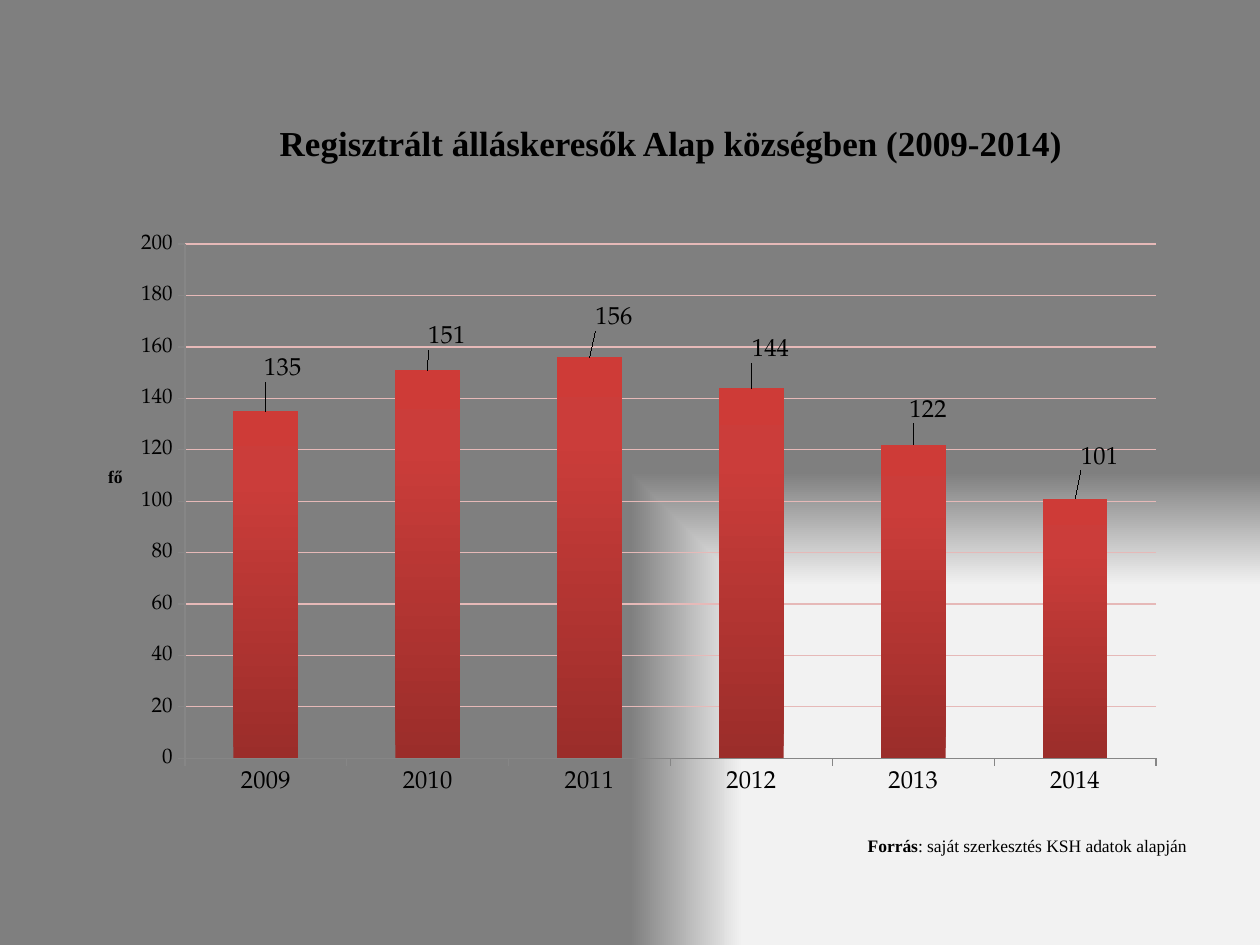
from lxml.etree import SubElement
from pptx import Presentation
from pptx.chart.data import CategoryChartData
from pptx.dml.color import RGBColor
from pptx.enum.chart import XL_CHART_TYPE, XL_LABEL_POSITION, XL_TICK_MARK
from pptx.enum.text import MSO_ANCHOR, PP_ALIGN
from pptx.oxml import parse_xml
from pptx.oxml.ns import nsdecls, qn
from pptx.util import Emu, Pt

SERIF = "Times New Roman"
CHART_FONT = "TeX Gyre Pagella"
JOBSEEKERS = {"2009": 135, "2010": 151, "2011": 156, "2012": 144, "2013": 122, "2014": 101}
LABEL_OFFSETS = [(17, -24), (19, -15), (24, -21), (19, -20), (15, -16), (25, -23)]


def px(length):
    return Emu(round(length * 914400 / 126))


def color(value):
    return RGBColor.from_string(value)


def format_font(font, **values):
    font.color.rgb = color(values.pop("color", "000000"))
    for name, value in values.items():
        setattr(font, name, value)


def gradient(stops, direction):
    """Return a gradFill element from (percent, colour) stops and direction XML."""
    stop_xml = "".join(
        f'<a:gs pos="{percent * 1000}"><a:srgbClr val="{value}"/></a:gs>' for percent, value in stops)
    return parse_xml(f'<a:gradFill {nsdecls("a")} rotWithShape="1">'
                     f'<a:gsLst>{stop_xml}</a:gsLst>{direction}</a:gradFill>')


def replace_gradient(fill, parent, stops, direction):
    fill.gradient()
    old = parent.find(qn("a:gradFill"))
    parent.replace(old, gradient(stops, direction))


def paint_background(slide):
    fill = slide.background.fill
    properties = slide.element.find(f".//{qn('p:bgPr')}")
    replace_gradient(fill, properties, [(0, "F2F2F2"), (76, "F2F2F2"), (100, "7F7F7F")],
                     '<a:path path="rect"><a:fillToRect l="100000" t="100000"/></a:path>')


def add_text(slide, box, runs, size, alignment, anchor, top_inset=6):
    """Place one paragraph of (text, bold) runs in the box."""
    frame = slide.shapes.add_textbox(*map(px, box)).text_frame
    settings = {"word_wrap": True, "vertical_anchor": anchor, "margin_top": px(top_inset)}
    for name, value in settings.items():
        setattr(frame, name, value)
    paragraph = frame.paragraphs[0]
    paragraph.alignment = alignment
    paragraph._p.get_or_add_pPr().set("indent", str(px(32)))
    for text, bold in runs:
        run = paragraph.add_run()
        run.text = text
        format_font(run.font, name=SERIF, size=Pt(size), bold=bold)


def manual_layout(**values):
    layout = parse_xml(f'<c:layout {nsdecls("c")}><c:manualLayout/></c:layout>')
    for name, value in values.items():
        SubElement(layout[0], qn(f"c:{name}")).set("val", str(value))
    return layout


def style_value_axis(axis):
    settings = {"minimum_scale": 0, "maximum_scale": 200, "major_unit": 20,
                "major_tick_mark": XL_TICK_MARK.OUTSIDE, "has_major_gridlines": True}
    for name, value in settings.items():
        setattr(axis, name, value)
    format_font(axis.tick_labels.font, size=Pt(12))
    grid = axis.major_gridlines.format.line
    grid.color.rgb = color("E6B9B8")
    grid.width = Pt(0.75)
    frame = axis.axis_title.text_frame
    frame.text = "fő"
    format_font(frame.paragraphs[0].runs[0].font, name=SERIF, size=Pt(10), bold=True)
    frame._txBody.bodyPr.set("rot", "0")
    frame._txBody.bodyPr.set("vert", "horz")
    title = axis.axis_title._element
    for old in title.findall(qn("c:layout")):
        title.remove(old)
    title.find(qn("c:tx")).addnext(manual_layout(xMode="edge", yMode="edge", x=0, y=0.42))


def style_columns(series, width, height):
    replace_gradient(series.format.fill, series._element.find(qn("c:spPr")),
                     [(0, "9B2D2A"), (80, "CB3D3A"), (100, "CE3B37")],
                     '<a:lin ang="16200000" scaled="0"/>')
    series.invert_if_negative = False
    for index, (right, down) in enumerate(LABEL_OFFSETS):
        label = series.points[index].data_label
        label.position = XL_LABEL_POSITION.OUTSIDE_END
        format_font(label.font, size=Pt(14))
        element = series._element.find(qn("c:dLbls")).findall(qn("c:dLbl"))[index]
        element.find(qn("c:idx")).addnext(
            manual_layout(x=round(right / width, 3), y=round(down / height, 3)))


def add_jobseeker_chart(slide, box):
    data = CategoryChartData()
    data.categories = list(JOBSEEKERS)
    data.add_series("Series 1", list(JOBSEEKERS.values()))
    chart = slide.shapes.add_chart(XL_CHART_TYPE.COLUMN_CLUSTERED, *map(px, box), data).chart
    chart.has_legend = False
    chart.has_title = False
    format_font(chart.font, name=CHART_FONT, size=Pt(10))
    plot = chart.plots[0]
    plot.gap_width = 150
    plot.vary_by_categories = False
    style_value_axis(chart.value_axis)
    chart.category_axis.major_tick_mark = XL_TICK_MARK.OUTSIDE
    format_font(chart.category_axis.tick_labels.font, size=Pt(14))
    for axis in (chart.category_axis, chart.value_axis):
        axis.format.line.color.rgb = color("868686")
        axis.format.line.width = Pt(0.75)
    style_columns(plot.series[0], *box[2:])
    plot_area = chart._chartSpace.chart.plotArea
    for old in plot_area.findall(qn("c:layout")):
        plot_area.remove(old)
    plot_area.insert(0, manual_layout(layoutTarget="inner", xMode="edge", yMode="edge",
                                      x=0.075, y=0.051, w=0.911, h=0.87))


def build_slide(presentation):
    slide = presentation.slides.add_slide(presentation.slide_layouts[6])
    paint_background(slide)
    add_text(slide, (194, 111, 922, 97), [("Regisztrált álláskeresők Alap községben (2009-2014)", True)],
             20, PP_ALIGN.CENTER, MSO_ANCHOR.TOP, top_inset=10)
    add_jobseeker_chart(slide, (105, 214, 1066, 591))
    add_text(slide, (748, 829, 451, 34),
             [("Forrás", True), (": saját szerkesztés KSH adatok alapján", False)],
             10, PP_ALIGN.RIGHT, MSO_ANCHOR.MIDDLE)


def main():
    presentation = Presentation()
    presentation.slide_width, presentation.slide_height = px(1260), px(945)
    build_slide(presentation)
    presentation.save("out.pptx")


if __name__ == "__main__":
    main()
